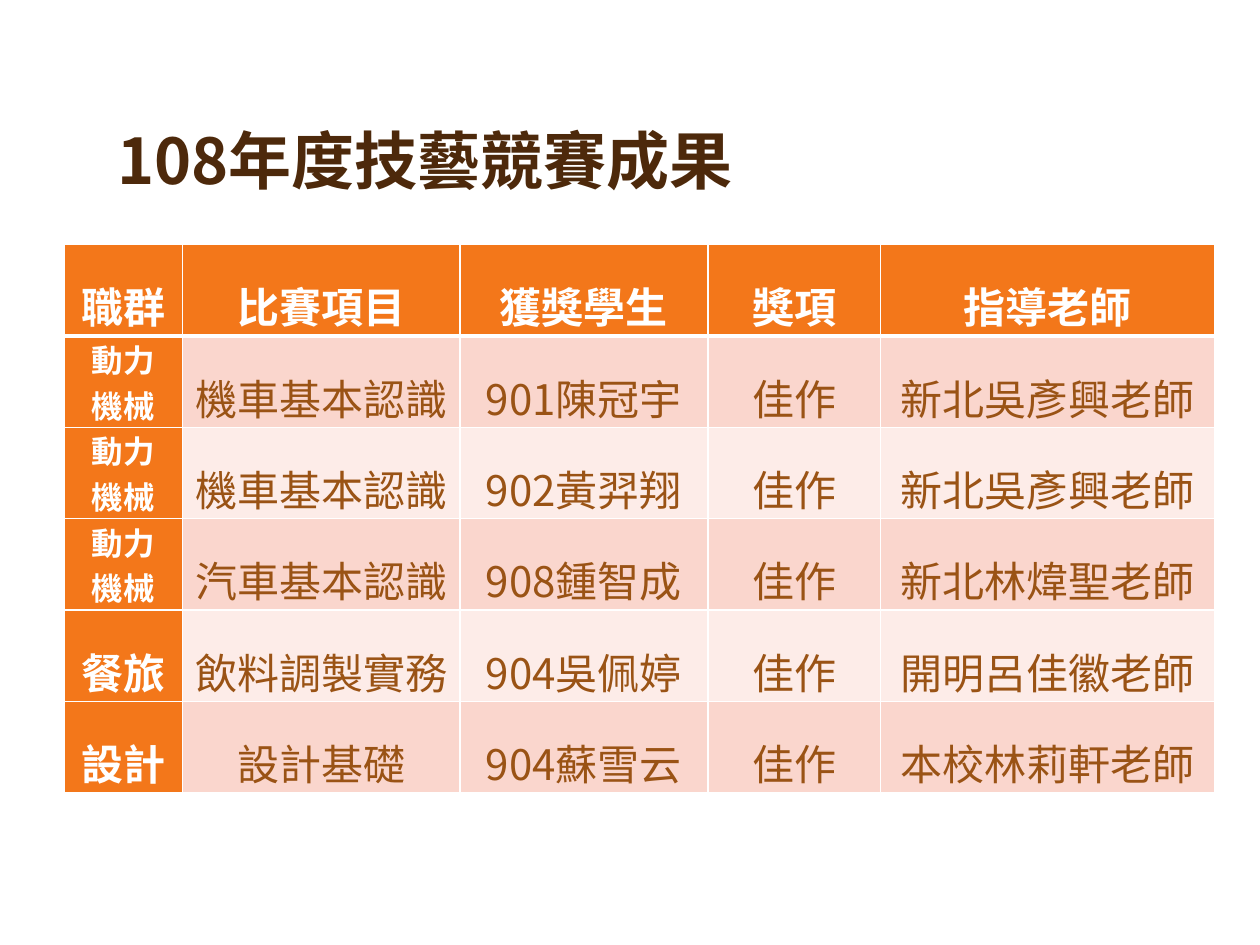
from dataclasses import dataclass
from typing import NamedTuple

from lxml import etree
from pptx import Presentation
from pptx import util as u
from pptx.dml.color import RGBColor
from pptx.enum import text
from pptx.oxml import ns


@dataclass(frozen=True)
class Theme:
    font: str = "Noto Sans CJK TC"
    title: str = "4D290B"
    accent: str = "F3771A"
    body: str = "9A5315"
    white: str = "FFFFFF"
    bands: tuple = ("FAD6CD", "FDECE8")
    title_size: int = 36
    cell_size: int = 24
    group_size: int = 18
    line: int = 1
    header_line: int = 3


class Box(NamedTuple):
    left: float
    top: float
    width: float
    height: float


class Award(NamedTuple):
    group: str
    contest: str
    student: str
    prize: str
    teacher: str


THEME = Theme()
TITLE_BOX = Box(8.3, 12.4, 82.5, 9.2)
TABLE_BOX = Box(5.1, 25.87, 91.3, 49.87)
COLUMNS = (9.4, 22, 19.7, 13.7, 26.5)
ROW, TALL_ROW = 7.6, 9.47
MECHANICS = "動力\n機械"
AWARDS = (
    Award("職群", "比賽項目", "獲獎學生", "獎項", "指導老師"),
    Award(MECHANICS, "機車基本認識", "901陳冠宇", "佳作", "新北吳彥興老師"),
    Award(MECHANICS, "機車基本認識", "902黃羿翔", "佳作", "新北吳彥興老師"),
    Award(MECHANICS, "汽車基本認識", "908鍾智成", "佳作", "新北林煒聖老師"),
    Award("餐旅", "飲料調製實務", "904吳佩婷", "佳作", "開明呂佳徽老師"),
    Award("設計", "設計基礎", "904蘇雪云", "佳作", "本校林莉軒老師"),
)
ROWS = (ROW, ROW, TALL_ROW, TALL_ROW, ROW, ROW)


def share(percent: float, whole: int) -> int:
    return round(whole * percent / 100)


def place(box: Box, prs) -> tuple:
    w, h = prs.slide_width, prs.slide_height
    return (share(box.left, w), share(box.top, h),
            share(box.width, w), share(box.height, h))


def write(tf, content: str, *, size: int, color: str, bold: bool, align=None,
          spacing: float = 1.0, before: int = 0, after: int = 0) -> None:
    for i, line in enumerate(content.split("\n")):
        p = tf.add_paragraph() if i else tf.paragraphs[0]
        p.alignment = align
        p.line_spacing = spacing
        p.space_before = u.Pt(0 if i else before)
        p.space_after = u.Pt(after)
        r = p.add_run()
        r.text = line
        r.font.name = THEME.font
        r.font.size = u.Pt(size)
        r.font.bold = bold
        r.font.color.rgb = RGBColor.from_string(color)
        ea = etree.Element(ns.qn("a:ea"), typeface=THEME.font)
        r.font._element.find(ns.qn("a:latin")).addnext(ea)


def add_borders(cell, top: int, bottom: int) -> None:
    tc_pr = cell._tc.get_or_add_tcPr()
    widths = {"L": THEME.line, "R": THEME.line, "T": top, "B": bottom}
    for side, width in widths.items():
        ln = etree.SubElement(tc_pr, ns.qn(f"a:ln{side}"), w=str(u.Pt(width)))
        fill = etree.SubElement(ln, ns.qn("a:solidFill"))
        etree.SubElement(fill, ns.qn("a:srgbClr"), val=THEME.white)


def format_cell(cell, content: str, row: int, col: int) -> None:
    heading = row == 0 or col == 0
    stacked = "\n" in content
    add_borders(cell,
                top=THEME.header_line if row == 1 else THEME.line,
                bottom=THEME.header_line if row == 0 else THEME.line)
    fill = THEME.accent if heading else THEME.bands[(row - 1) % 2]
    cell.fill.solid()
    cell.fill.fore_color.rgb = RGBColor.from_string(fill)
    cell.margin_left = cell.margin_right = u.Inches(0.08)
    cell.margin_top = cell.margin_bottom = 0
    write(cell.text_frame, content,
          size=THEME.group_size if stacked else THEME.cell_size,
          color=THEME.white if heading else THEME.body,
          bold=heading, align=text.PP_ALIGN.CENTER,
          spacing=1.0 if stacked else 1.5,
          before=6, after=0 if stacked else 6)


def add_title(s, prs, content: str) -> None:
    sp = s.shapes.title
    sp.left, sp.top, sp.width, sp.height = place(TITLE_BOX, prs)
    tf = sp.text_frame
    tf.word_wrap = True
    tf.auto_size = text.MSO_AUTO_SIZE.NONE
    tf.vertical_anchor = text.MSO_ANCHOR.BOTTOM
    write(tf, content, size=THEME.title_size, color=THEME.title, bold=True,
          align=text.PP_ALIGN.LEFT, spacing=0.9)


def add_awards(s, prs) -> None:
    table = s.shapes.add_table(len(AWARDS), len(COLUMNS),
                               *place(TABLE_BOX, prs)).table
    table.first_col = True
    for column, width in zip(table.columns, COLUMNS):
        column.width = share(width, prs.slide_width)
    for i, (award, height) in enumerate(zip(AWARDS, ROWS)):
        table.rows[i].height = share(height, prs.slide_height)
        for j, content in enumerate(award):
            format_cell(table.cell(i, j), content, i, j)


def main() -> None:
    prs = Presentation()
    prs.slide_width, prs.slide_height = u.Inches(10), u.Inches(7.5)
    s = prs.slides.add_slide(prs.slide_layouts[5])
    add_title(s, prs, "108年度技藝競賽成果")
    add_awards(s, prs)
    prs.save("out.pptx")


if __name__ == "__main__":
    main()
